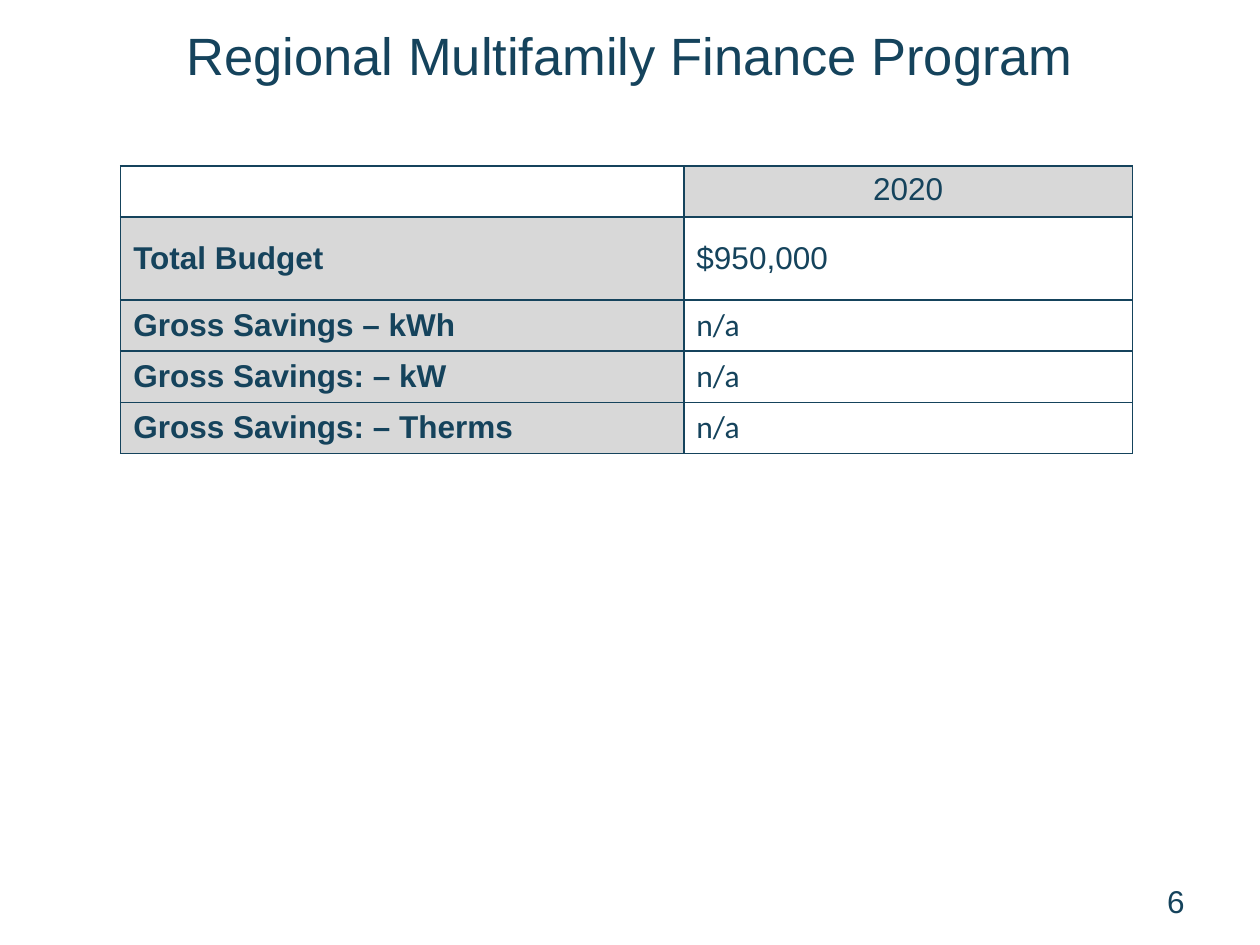
from lxml.etree import SubElement
from pptx import Presentation
from pptx.dml.color import RGBColor
from pptx.enum.text import MSO_ANCHOR, PP_ALIGN
from pptx.oxml.ns import qn
from pptx.util import Pt

COLORS = {"ink": "15435C", "gray": "D8D8D8"}


class Deck:
    def __init__(self, show):
        self.slide = show.slides.add_slide(show.slide_layouts[5])
        self.font = "Arial"
        self.size = 18

    def label(self, frame, text, align=PP_ALIGN.LEFT, size=None, font=None, bold=False):
        para = frame.paragraphs[0]
        para.alignment = align
        run = para.add_run()
        run.text = text
        run.font.name = font or self.font
        run.font.size = Pt(size or self.size)
        run.font.bold = bold
        run.font.color.rgb = RGBColor.from_string(COLORS["ink"])
        return para

    def title(self, text, left, top, width, height):
        shape = self.slide.shapes.title
        shape.left, shape.top = Pt(left), Pt(top)
        shape.width, shape.height = Pt(width), Pt(height)
        frame = shape.text_frame
        frame.vertical_anchor = MSO_ANCHOR.MIDDLE
        self.label(frame, text, PP_ALIGN.CENTER, size=30).line_spacing = 0.9

    def number(self, text, left, top, width, height):
        box = self.slide.shapes.add_textbox(Pt(left), Pt(top), Pt(width), Pt(height))
        frame = box.text_frame
        frame.word_wrap = True
        frame.vertical_anchor = MSO_ANCHOR.MIDDLE
        self.label(frame, text, PP_ALIGN.RIGHT)

    def border(self, cell):
        props = cell._tc.get_or_add_tcPr()
        for side in ("lnL", "lnR", "lnT", "lnB"):
            line = SubElement(props, qn(f"a:{side}"), w=str(Pt(1)))
            fill = SubElement(line, qn("a:solidFill"))
            SubElement(fill, qn("a:srgbClr"), val=COLORS["ink"])

    def cell(self, cell, text, shade, anchor=MSO_ANCHOR.MIDDLE, **style):
        self.border(cell)
        if shade:
            cell.fill.solid()
            cell.fill.fore_color.rgb = RGBColor.from_string(COLORS["gray"])
        else:
            cell.fill.background()
        cell.vertical_anchor = anchor
        if text:
            self.label(cell.text_frame, text, **style)

    def table(self, year, rows, left, top, widths, heights):
        """Draw a year header above rows of (label, value, value font)."""
        table = self.slide.shapes.add_table(
            len(heights), len(widths), Pt(left), Pt(top),
            Pt(sum(widths)), Pt(sum(heights))).table
        for col, width in zip(table.columns, widths):
            col.width = Pt(width)
        for row, height in zip(table.rows, heights):
            row.height = Pt(height)
        self.cell(table.cell(0, 0), "", False)
        self.cell(table.cell(0, 1), year, True, MSO_ANCHOR.TOP, align=PP_ALIGN.CENTER)
        for i, (name, value, font) in enumerate(rows, 1):
            self.cell(table.cell(i, 0), name, True, bold=True)
            self.cell(table.cell(i, 1), value, False, font=font)


def main():
    show = Presentation()
    show.slide_width, show.slide_height = Pt(720), Pt(540)
    deck = Deck(show)
    deck.title("Regional Multifamily Finance Program", 36, 0, 648, 67)
    deck.number("6", 516, 500.5, 168, 29)
    rows = [
        ("Total Budget", "$950,000", "Arial"),
        ("Gross Savings – kWh", "n/a", "Calibri"),
        ("Gross Savings: – kW", "n/a", "Calibri"),
        ("Gross Savings: – Therms", "n/a", "Calibri"),
    ]
    deck.table("2020", rows, 69, 94.8, [321.8, 256.4], [29.2, 47.5] + [29.2] * 3)
    show.save("out.pptx")


if __name__ == "__main__":
    main()
